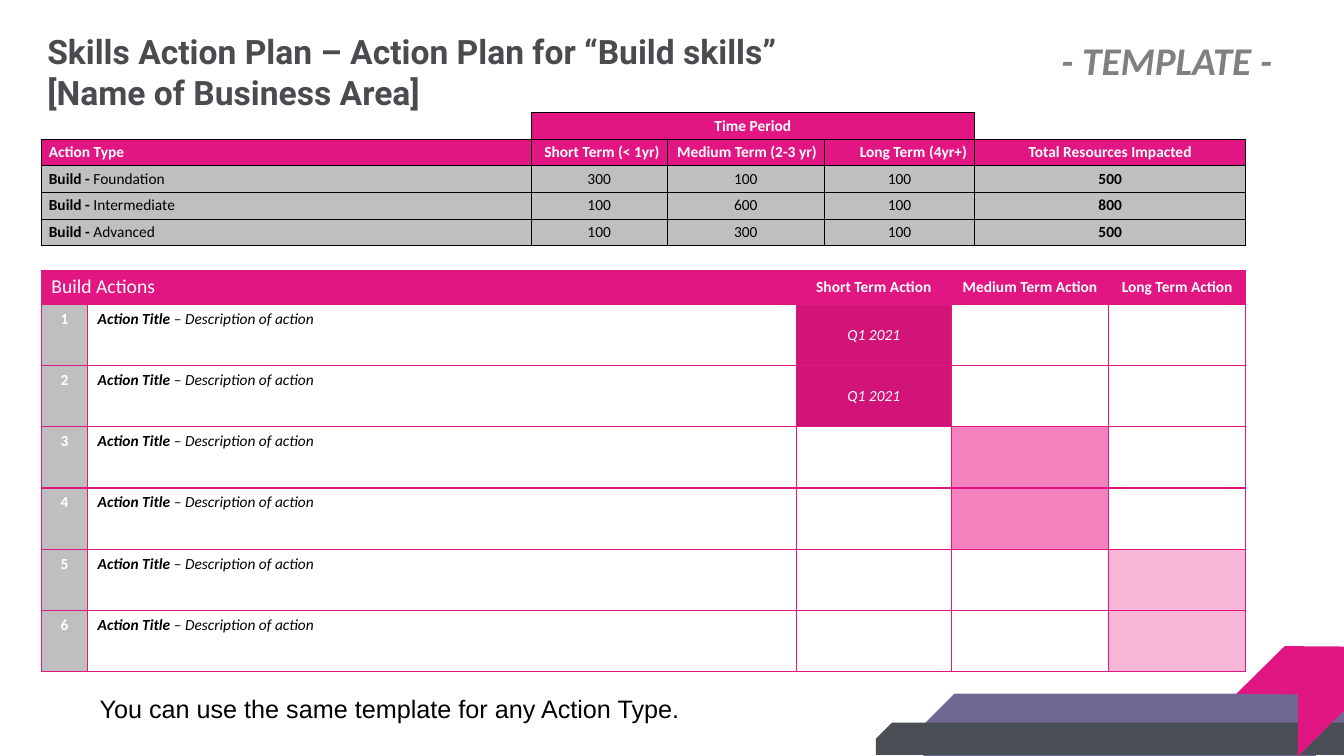
from lxml.etree import SubElement
from pptx import Presentation
from pptx.dml.color import RGBColor
from pptx.enum.shapes import MSO_SHAPE
from pptx.enum.text import MSO_ANCHOR, MSO_AUTO_SIZE, PP_ALIGN
from pptx.oxml.ns import qn
from pptx.util import Pt

PINK = RGBColor(0xE2, 0x16, 0x83)
CHEVRON_PINK = RGBColor(0xE0, 0x17, 0x83)
DEEP_PINK = RGBColor(0xD2, 0x14, 0x78)
MID_PINK = RGBColor(0xF3, 0x81, 0xBD)
PALE_PINK = RGBColor(0xF8, 0xB6, 0xD9)
PURPLE = RGBColor(0x71, 0x67, 0x94)
SLATE = RGBColor(0x4A, 0x4F, 0x55)
TITLE_GREY = RGBColor(0x4A, 0x4B, 0x4E)
LABEL_GREY = RGBColor(0x80, 0x80, 0x80)
CELL_GREY = RGBColor(0xBF, 0xBF, 0xBF)
WHITE = RGBColor(0xFF, 0xFF, 0xFF)
BLACK = RGBColor(0, 0, 0)


def write(paragraph, text, size=11, font="Calibri", color=BLACK,
          bold=False, italic=False, align=PP_ALIGN.LEFT):
    paragraph.alignment = align
    span = paragraph.add_run()
    span.text = text
    span.font.size = Pt(size)
    span.font.name = font
    span.font.color.rgb = color
    span.font.bold = bold
    span.font.italic = italic


def format_cell(cell, fill, line, width, sides="LRTB", anchor=MSO_ANCHOR.MIDDLE,
                margins=(5.4, 2.7)):
    """Set borders, fill and margins, and return the cell's first paragraph."""
    properties = cell._tc.get_or_add_tcPr()
    for side in sides:
        border = SubElement(properties, qn(f"a:ln{side}"), w=str(Pt(width)))
        paint = SubElement(border, qn("a:solidFill"))
        SubElement(paint, qn("a:srgbClr"), val=str(line))
    if fill is None:
        cell.fill.background()
    else:
        cell.fill.solid()
        cell.fill.fore_color.rgb = fill
    cell.vertical_anchor = anchor
    cell.margin_left = cell.margin_right = Pt(margins[0])
    cell.margin_top = cell.margin_bottom = Pt(margins[1])
    paragraph = cell.text_frame.paragraphs[0]
    SubElement(paragraph._p, qn("a:endParaRPr"), sz="1100")
    return paragraph


deck = Presentation()
deck.slide_width, deck.slide_height = Pt(960), Pt(540)
page = deck.slides.add_slide(deck.slide_layouts[5])

# Corner decoration
decorations = [
    (MSO_SHAPE.SNIP_2_DIAG_RECTANGLE, 788.4, 366.5, 44.6, 302.4, 270, [0, 0.5], PURPLE),
    (MSO_SHAPE.SNIP_1_RECTANGLE, 625.7, 516.2, 337, 23, 0, [0.5], SLATE),
    (MSO_SHAPE.CHEVRON, 893.5, 458.6, 79.9, 62.6, 315.4, [0.5], CHEVRON_PINK),
]
for kind, left, top, width, height, rotation, adjustments, color in decorations:
    shape = page.shapes.add_shape(kind, Pt(left), Pt(top), Pt(width), Pt(height))
    shape.rotation = rotation
    for index, value in enumerate(adjustments):
        shape.adjustments[index] = value
    shape.shadow.inherit = False
    shape.fill.solid()
    shape.fill.fore_color.rgb = color
    shape.line.fill.background()
    if kind == MSO_SHAPE.SNIP_1_RECTANGLE:
        shape._element.spPr.find(qn("a:xfrm")).set("flipH", "1")

# Title
title = page.shapes.title
title.left, title.top, title.width, title.height = Pt(33.8), Pt(22.3), Pt(665.3), Pt(58.3)
frame = title.text_frame
frame.auto_size = MSO_AUTO_SIZE.NONE
frame.word_wrap = True
frame.vertical_anchor = MSO_ANCHOR.TOP
frame.margin_left = frame.margin_right = frame.margin_top = frame.margin_bottom = 0
title_format = dict(size=24, font="Roboto", color=TITLE_GREY, bold=True)
write(frame.paragraphs[0], "Skills Action Plan – Action Plan for “Build skills”", **title_format)
write(frame.add_paragraph(), "[Name of Business Area]", **title_format)

# Actions table
action_columns = [33.1, 506.2, 110.9, 112.3, 97.9]
actions = page.shapes.add_table(7, 5, Pt(29.5), Pt(193), Pt(860.4), Pt(286.8)).table
actions.first_row = actions.horz_banding = False
for column, width in zip(actions.columns, action_columns):
    column.width = Pt(width)
for index, row in enumerate(actions.rows):
    row.height = Pt(43.75 if index else 24.3)
actions.cell(0, 0).merge(actions.cell(0, 1))

header = dict(color=WHITE, bold=True, align=PP_ALIGN.CENTER)
wide = dict(anchor=MSO_ANCHOR.TOP, margins=(7.2, 3.6))
headings = ["Build Actions", "", "Short Term Action", "Medium Term Action", "Long Term Action"]
for index, heading in enumerate(headings):
    options = wide if index < 2 else {}
    paragraph = format_cell(actions.cell(0, index), PINK, PINK, 1, **options)
    if index == 0:
        write(paragraph, heading, size=14, color=WHITE)
    elif heading:
        write(paragraph, heading, **header)

term_fills = [DEEP_PINK, MID_PINK, PALE_PINK]
for number in range(1, 7):
    active_term = (number - 1) // 2
    paragraph = format_cell(actions.cell(number, 0), CELL_GREY, PINK, 1, **wide)
    write(paragraph, str(number), **header)
    paragraph = format_cell(actions.cell(number, 1), None, PINK, 1, **wide)
    write(paragraph, "Action Title ", bold=True, italic=True)
    write(paragraph, "– Description of action", italic=True)
    for term, fill in enumerate(term_fills):
        paragraph = format_cell(actions.cell(number, 2 + term),
                                fill if term == active_term else None, PINK, 1)
        if term == active_term == 0:
            write(paragraph, "Q1 2021", color=WHITE, italic=True, align=PP_ALIGN.CENTER)

# Resources table
resource_columns = [349.9, 97.2, 112.3, 107.3, 193.7]
resources = page.shapes.add_table(5, 5, Pt(29.5), Pt(80.4), Pt(860.4), Pt(94.5)).table
resources.first_row = resources.horz_banding = False
for column, width in zip(resources.columns, resource_columns):
    column.width = Pt(width)
for row in resources.rows:
    row.height = Pt(18.9)
resources.cell(0, 1).merge(resources.cell(0, 3))

format_cell(resources.cell(0, 0), None, BLACK, 0.5, sides="RB")
format_cell(resources.cell(0, 4), None, BLACK, 0.5, sides="LB")
for index in range(1, 4):
    paragraph = format_cell(resources.cell(0, index), PINK, BLACK, 0.5)
    if index == 1:
        write(paragraph, "Time Period", **header)

resource_headings = [
    ("Action Type", PP_ALIGN.LEFT),
    ("Short Term (< 1yr)", PP_ALIGN.RIGHT),
    ("Medium Term (2-3 yr)", PP_ALIGN.RIGHT),
    ("Long Term (4yr+)", PP_ALIGN.RIGHT),
    ("Total Resources Impacted", PP_ALIGN.CENTER),
]
for index, (heading, align) in enumerate(resource_headings):
    paragraph = format_cell(resources.cell(1, index), PINK, BLACK, 0.5)
    write(paragraph, heading, color=WHITE, bold=True, align=align)

levels = [
    ("Foundation", [300, 100, 100]),
    ("Intermediate", [100, 600, 100]),
    ("Advanced", [100, 300, 100]),
]
for row, (level, counts) in enumerate(levels, start=2):
    paragraph = format_cell(resources.cell(row, 0), CELL_GREY, BLACK, 0.5)
    write(paragraph, "Build - ", bold=True)
    write(paragraph, level)
    for column, count in enumerate(counts + [sum(counts)], start=1):
        paragraph = format_cell(resources.cell(row, column), CELL_GREY, BLACK, 0.5)
        write(paragraph, str(count), bold=column == 4, align=PP_ALIGN.CENTER)

# Label and closing note
label = page.shapes.add_textbox(Pt(751), Pt(22.3), Pt(173.5), Pt(41))
label.text_frame.word_wrap = True
write(label.text_frame.paragraphs[0], "- TEMPLATE -",
      size=28, color=LABEL_GREY, bold=True, italic=True)

note = page.shapes.add_textbox(Pt(64), Pt(491.8), Pt(481), Pt(28.8))
note.text_frame.word_wrap = True
write(note.text_frame.paragraphs[0], "You can use the same template for any Action Type.",
      size=18, font="Arial")

deck.save("out.pptx")
